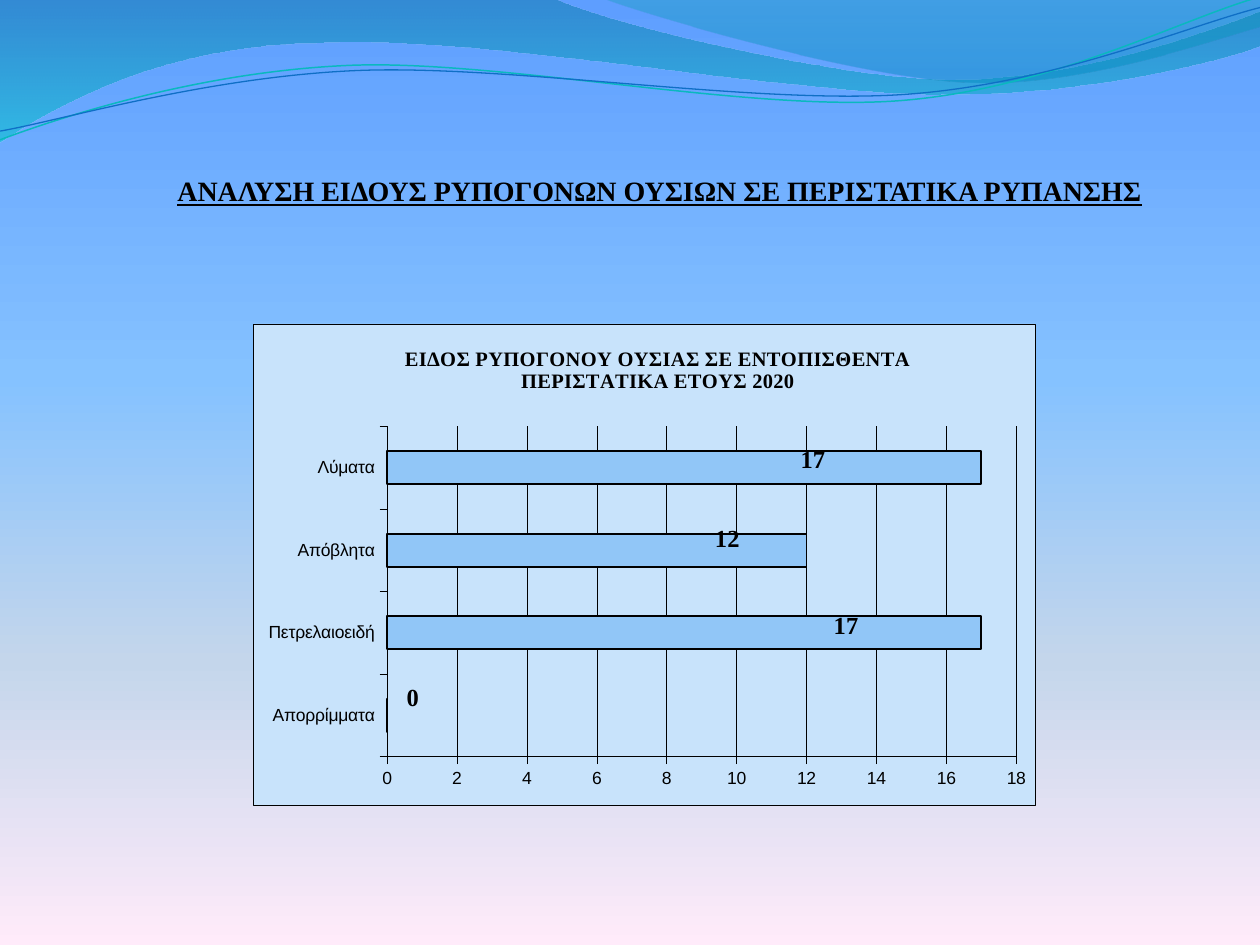
from dataclasses import dataclass
from itertools import islice

from lxml.etree import SubElement
from pptx import Presentation
from pptx.chart.data import CategoryChartData
from pptx.dml.color import RGBColor
from pptx.enum.chart import XL_CHART_TYPE, XL_LABEL_POSITION, XL_TICK_LABEL_POSITION, XL_TICK_MARK
from pptx.enum.text import MSO_ANCHOR, PP_ALIGN
from pptx.oxml import parse_xml
from pptx.oxml.ns import nsdecls, qn
from pptx.util import Pt

SERIF = "Times New Roman"
BLACK = "000000"
CHART_WIDTH, CHART_HEIGHT = 447, 275.4


@dataclass
class Stop:
    position: int
    color: str
    opacity: int = 100


@dataclass
class Wave:
    start: tuple
    segments: list
    stops: tuple = ()
    line: str = ""
    width: float = 0


@dataclass
class Bar:
    category: str
    value: int
    label_dx: float
    label_dy: float


BACKGROUND = (Stop(0, "5E9EFF"), Stop(40, "85C2FF"), Stop(70, "C4D6EB"), Stop(100, "FFEBFA"))
WAVES = [
    Wave((0, -0.7), [
        [(316.8, -0.7)],
        [(342.7, 12.2), (478.1, 45.4), (545.8, 45.4)],
        [(614.2, 45.4), (689.8, 18.7), (720, 6.5)],
        [(720.7, 25.9)],
        [(707.8, 31.7), (626.4, 54.7), (537.1, 54)],
        [(447.8, 54), (275, 20.2), (185, 24.5)],
        [(92.9, 25.2), (33.1, 59.8), (-0.7, 81.4)],
    ], stops=(Stop(0, "0074A1", 45), Stop(100, "00C6CF", 55))),
    Wave((344.9, -0.7), [
        [(366.5, 7.9), (491, 44.6), (553.7, 46.8)],
        [(616.3, 49.7), (691.9, 23), (720, 15.1)],
        [(720, 0)],
    ], stops=(Stop(0, "00A1A9", 30), Stop(80, "008BBF", 45))),
    Wave((0, 79.9), [
        [(34.6, 67), (113.8, 41), (199.4, 37.4)],
        [(284.4, 33.8), (427, 64.1), (513.4, 57.6)],
        [(599.8, 51.1), (675.4, 10.8), (718.6, -1.4)],
    ], line="0AB8BF", width=0.85),
    Wave((0, 74.9), [
        [(33.8, 69.1), (118.1, 43.9), (203.8, 40.3)],
        [(290.2, 36.7), (429.8, 59.8), (516.2, 54)],
        [(601.9, 48.2), (677.5, 15.1), (720, 4.3)],
    ], line="0F6FC6", width=0.75),
]
BARS = [
    Bar("Απορρίμματα", 0, 8.4, -10),
    Bar("Πετρελαιοειδή", 17, -87.2, -3.9),
    Bar("Απόβλητα", 12, -55.3, -6.6),
    Bar("Λύματα", 17, -106.2, -4.4),
]


def rgb(color: str) -> RGBColor:
    """Turn a hex string into a colour."""
    return RGBColor.from_string(color)


def set_font(font, name: str, size: float, bold: bool = False) -> None:
    """Apply a black typeface at the given size."""
    font.name, font.size, font.bold = name, Pt(size), bold
    font.color.rgb = rgb(BLACK)


def set_line(line, color: str, width: float) -> None:
    """Colour a line and set its width."""
    line.color.rgb = rgb(color)
    line.width = Pt(width)


def set_gradient(fill, root, stops: tuple) -> None:
    """Fill with a gradient running from top to bottom."""
    fill.gradient()
    fill.gradient_angle = 270
    stop_list = next(root.iter(qn("a:gsLst")))
    stop_list.clear()
    for stop in stops:
        gs = SubElement(stop_list, qn("a:gs"), pos=str(stop.position * 1000))
        clr = SubElement(gs, qn("a:srgbClr"), val=stop.color)
        SubElement(clr, qn("a:alpha"), val=str(stop.opacity * 1000))


def set_layout(parent, index: int, edge: bool, x: float, y: float, w: float = 0, h: float = 0) -> None:
    """Place a chart part by lengths in points."""
    for old in parent.findall(qn("c:layout")):
        parent.remove(old)
    layout = parent.makeelement(qn("c:layout"))
    parent.insert(index, layout)
    manual = SubElement(layout, qn("c:manualLayout"))
    if w:
        SubElement(manual, qn("c:layoutTarget"), val="inner")
    if edge:
        for mode in ("xMode", "yMode"):
            SubElement(manual, qn(f"c:{mode}"), val="edge")
    shares = {"x": x / CHART_WIDTH, "y": y / CHART_HEIGHT}
    if w:
        shares.update(w=w / CHART_WIDTH, h=h / CHART_HEIGHT)
    for key, value in shares.items():
        SubElement(manual, qn(f"c:{key}"), val=str(value))


def bend_segments(sp, segments: list) -> None:
    """Join each run of three points into one cubic curve."""
    steps = iter(list(sp._element.iter(qn("a:lnTo"))))
    for segment in segments:
        group = list(islice(steps, len(segment)))
        if len(group) == 3:
            curve = group[0].makeelement(qn("a:cubicBezTo"))
            group[0].addprevious(curve)
            for step in group:
                curve.append(step[0])
                step.getparent().remove(step)


def add_wave(s, wave: Wave) -> None:
    """Draw a filled wave or a curved line."""
    points = [point for segment in wave.segments for point in segment]
    builder = s.shapes.build_freeform(Pt(wave.start[0]), Pt(wave.start[1]))
    builder.add_line_segments([(Pt(x), Pt(y)) for x, y in points], close=bool(wave.stops))
    sp = builder.convert_to_shape()
    bend_segments(sp, wave.segments)
    sp.shadow.inherit = False
    if wave.stops:
        set_gradient(sp.fill, sp._element, wave.stops)
        sp.line.fill.background()
    else:
        sp.fill.background()
        set_line(sp.line, wave.line, wave.width)


def add_title(s, text: str) -> None:
    """Fill and place the title in front of the waves."""
    sp = s.shapes.title
    s.shapes._spTree.append(sp._element)
    sp.left, sp.top, sp.width, sp.height = Pt(82), Pt(55.5), Pt(590), Pt(63)
    tf = sp.text_frame
    tf.text = text
    tf.vertical_anchor = MSO_ANCHOR.BOTTOM
    tf.margin_left = tf.margin_right = tf.margin_bottom = 0
    tf.margin_top = Pt(3.6)
    p = tf.paragraphs[0]
    p.alignment = PP_ALIGN.CENTER
    set_font(p.runs[0].font, SERIF, 16, True)
    p.runs[0].font.underline = True


def hide_leader_lines(labels) -> None:
    """Switch off the lines between bars and moved labels."""
    for flag in labels.findall(qn("c:showLeaderLines")):
        flag.set("val", "0")
    labels.append(parse_xml(
        f'<c:extLst {nsdecls("c")}><c:ext uri="{{CE6537A1-D6FC-4f65-9D91-7224C49458BB}}" '
        'xmlns:c15="http://schemas.microsoft.com/office/drawing/2012/chart">'
        '<c15:showLeaderLines val="0"/></c:ext></c:extLst>'))


def add_bar_chart(s, title: str, bars: list) -> None:
    """Add the bar chart with its placed labels."""
    data = CategoryChartData()
    data.categories = [bar.category for bar in bars]
    data.add_series("Series 1", [bar.value for bar in bars])
    chart = s.shapes.add_chart(XL_CHART_TYPE.BAR_CLUSTERED, Pt(144.7), Pt(185),
                               Pt(CHART_WIDTH), Pt(CHART_HEIGHT), data).chart
    chart.has_legend = False
    set_font(chart.font, "Arial", 10)
    chart._chartSpace.chart.addnext(parse_xml(
        f'<c:spPr {nsdecls("c", "a")}><a:solidFill><a:srgbClr val="C8E3FB"/></a:solidFill>'
        f'<a:ln w="{Pt(0.25)}"><a:solidFill><a:srgbClr val="{BLACK}"/></a:solidFill></a:ln></c:spPr>'))
    set_layout(chart._chartSpace.chart.plotArea, 0, True, 76.4, 58.6, 359.8, 189)

    tf = chart.chart_title.text_frame
    tf.text = title
    set_font(tf.paragraphs[0].runs[0].font, SERIF, 11.7, True)
    chart.chart_title.include_in_layout = False
    set_layout(chart.chart_title._element, 1, True, 84.5, 10.2)

    for axis in (chart.category_axis, chart.value_axis):
        axis.major_tick_mark = XL_TICK_MARK.OUTSIDE
        axis.minor_tick_mark = XL_TICK_MARK.NONE
        set_font(axis.tick_labels.font, "Arial", 10)
        set_line(axis.format.line, BLACK, 0.25)
    chart.category_axis.tick_label_position = XL_TICK_LABEL_POSITION.LOW
    axis = chart.value_axis
    axis.minimum_scale, axis.maximum_scale, axis.major_unit = 0, 18, 2
    set_line(axis.major_gridlines.format.line, BLACK, 0.25)

    plot = chart.plots[0]
    plot.vary_by_categories = False
    plot.gap_width = 150
    series = plot.series[0]
    series.format.fill.solid()
    series.format.fill.fore_color.rgb = rgb("91C6F7")
    set_line(series.format.line, BLACK, 1)
    for i, bar in enumerate(bars):
        label = series.points[i].data_label
        set_font(label.font, SERIF, 14, True)
        label.position = XL_LABEL_POSITION.OUTSIDE_END
        set_layout(label._get_or_add_dLbl(), 1, False, bar.label_dx, bar.label_dy)
    hide_leader_lines(series._element.find(qn("c:dLbls")))


def main() -> None:
    """Build the slide and save it."""
    prs = Presentation()
    prs.slide_width, prs.slide_height = Pt(720), Pt(540)
    s = prs.slides.add_slide(prs.slide_layouts[5])
    set_gradient(s.background.fill, s._element, BACKGROUND)
    for wave in WAVES:
        add_wave(s, wave)
    add_title(s, "ΑΝΑΛΥΣΗ ΕΙΔΟΥΣ ΡΥΠΟΓΟΝΩΝ ΟΥΣΙΩΝ ΣΕ ΠΕΡΙΣΤΑΤΙΚΑ ΡΥΠΑΝΣΗΣ")
    add_bar_chart(s, "ΕΙΔΟΣ ΡΥΠΟΓΟΝΟΥ ΟΥΣΙΑΣ ΣΕ ΕΝΤΟΠΙΣΘΕΝΤΑ ΠΕΡΙΣΤΑΤΙΚΑ ΕΤΟΥΣ 2020", BARS)
    prs.save("out.pptx")


if __name__ == "__main__":
    main()
